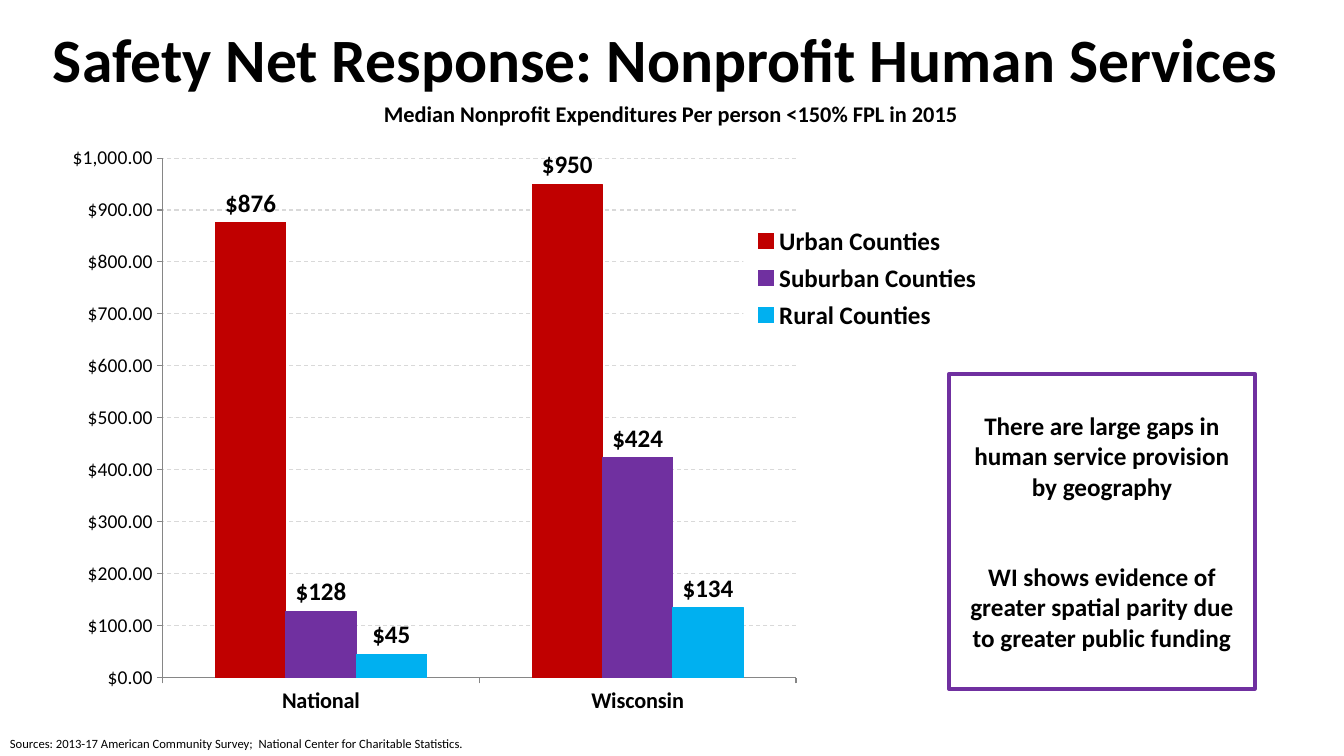
from dataclasses import dataclass

from lxml import etree
from pptx import Presentation
from pptx.chart.data import CategoryChartData
from pptx.dml.color import RGBColor
from pptx.enum.chart import XL_CHART_TYPE, XL_LABEL_POSITION, XL_LEGEND_POSITION, XL_TICK_MARK
from pptx.enum.dml import MSO_LINE
from pptx.enum.shapes import MSO_SHAPE
from pptx.enum.text import MSO_ANCHOR, PP_ALIGN
from pptx.oxml import parse_xml
from pptx.oxml.ns import qn
from pptx.util import Pt

PX = 9525  # EMU per px
CHART_NS = "http://schemas.openxmlformats.org/drawingml/2006/chart"
DRAWING_NS = "http://schemas.openxmlformats.org/drawingml/2006/main"


@dataclass(frozen=True)
class Theme:
    font: str = "Calibri"
    text: str = "000000"
    paper: str = "FFFFFF"
    axis: str = "868686"
    grid: str = "D9D9D9"
    urban: str = "C00000"
    suburban: str = "7030A0"
    rural: str = "00B0F0"
    title_size: int = 44
    body_size: int = 18
    label_size: int = 16
    tick_size: int = 14
    source_size: int = 9


class SlideBuilder:
    def __init__(self, slide, theme):
        self.slide = slide
        self.theme = theme

    def style_font(self, font, size, bold=False):
        font.name = self.theme.font
        font.size = Pt(size)
        font.bold = bold
        font.color.rgb = RGBColor.from_string(self.theme.text)

    def set_text(self, shape, paragraphs, size, bold, align, gap=0):
        frame = shape.text_frame
        frame.text = "\n".join(paragraphs)
        for index, para in enumerate(frame.paragraphs):
            para.alignment = align
            para.space_before = Pt(gap if index else 0)
            for span in para.runs:
                self.style_font(span.font, size, bold)

    def box(self, bounds, paragraphs, size, align=PP_ALIGN.CENTER, border=None, gap=0):
        shape = self.slide.shapes.add_shape(MSO_SHAPE.RECTANGLE, *(n * PX for n in bounds))
        shape.shadow.inherit = False
        shape.fill.solid()
        shape.fill.fore_color.rgb = RGBColor.from_string(self.theme.paper)
        if border:
            shape.line.color.rgb = RGBColor.from_string(border)
            shape.line.width = Pt(3)
        else:
            shape.line.fill.background()
        shape.text_frame.word_wrap = True
        shape.text_frame.vertical_anchor = MSO_ANCHOR.MIDDLE
        self.set_text(shape, paragraphs, size, True, align, gap)

    def note(self, bounds, text, size):
        shape = self.slide.shapes.add_textbox(*(n * PX for n in bounds))
        shape.text_frame.word_wrap = False
        self.set_text(shape, [text], size, False, PP_ALIGN.LEFT)

    def column_chart(self, bounds, categories, series):
        data = CategoryChartData()
        data.categories = categories
        for name, values, _ in series:
            data.add_series(name, values)
        chart = self.slide.shapes.add_chart(
            XL_CHART_TYPE.COLUMN_CLUSTERED, *(n * PX for n in bounds), data).chart
        chart.has_title = False
        self.style_font(chart.font, self.theme.body_size)

        # Columns and their value labels
        plot = chart.plots[0]
        plot.gap_width = 150
        plot.overlap = 0
        plot.vary_by_categories = False
        for column, (_, _, color) in zip(plot.series, series):
            rgb = RGBColor.from_string(color)
            column.format.fill.solid()
            column.format.fill.fore_color.rgb = rgb
            column.format.line.color.rgb = rgb
            column.format.line.width = Pt(0.75)
            labels = column.data_labels
            labels.show_value = True
            labels.number_format = '"$"#,##0'
            labels.number_format_is_linked = False
            labels.position = XL_LABEL_POSITION.OUTSIDE_END
            self.style_font(labels.font, self.theme.body_size, True)

        self.style_axes(chart)
        self.place_legend(chart)
        plot_area = chart.element.find(".//" + qn("c:plotArea"))
        for layout in plot_area.findall(qn("c:layout")):
            plot_area.remove(layout)
        plot_area.insert(0, self.layout(0.085, 0.026, 0.638, 0.882, inner=True))

    def style_axes(self, chart):
        for axis, size, bold in ((chart.category_axis, self.theme.label_size, True),
                                 (chart.value_axis, self.theme.tick_size, False)):
            axis.major_tick_mark = XL_TICK_MARK.OUTSIDE
            axis.minor_tick_mark = XL_TICK_MARK.NONE
            axis.format.line.color.rgb = RGBColor.from_string(self.theme.axis)
            axis.format.line.width = Pt(0.75)
            self.style_font(axis.tick_labels.font, size, bold)
        scale = chart.value_axis
        scale.minimum_scale, scale.maximum_scale, scale.major_unit = 0, 1000, 100
        scale.tick_labels.number_format = '"$"#,##0.00'
        scale.tick_labels.number_format_is_linked = False
        scale.has_major_gridlines = True
        grid_line = scale.major_gridlines.format.line
        grid_line.color.rgb = RGBColor.from_string(self.theme.grid)
        grid_line.width = Pt(0.75)
        grid_line.dash_style = MSO_LINE.DASH

    def place_legend(self, chart):
        chart.has_legend = True
        legend = chart.legend
        legend.position = XL_LEGEND_POSITION.RIGHT
        legend.include_in_layout = False
        self.style_font(legend.font, self.theme.body_size, True)
        element = chart.element.find(".//" + qn("c:legend"))
        element.find(qn("c:legendPos")).addnext(self.layout(0.67, 0.13, 0.25, 0.2))
        # A paper-coloured ground hides the grid behind the legend
        ground = parse_xml(
            f'<c:spPr xmlns:c="{CHART_NS}" xmlns:a="{DRAWING_NS}"><a:solidFill>'
            f'<a:srgbClr val="{self.theme.paper}"/></a:solidFill></c:spPr>')
        element.find(qn("c:overlay")).addnext(ground)

    @staticmethod
    def layout(left, top, width, height, inner=False):
        layout = parse_xml(f'<c:layout xmlns:c="{CHART_NS}"><c:manualLayout/></c:layout>')
        settings = [("layoutTarget", "inner")] if inner else []
        settings += [("xMode", "edge"), ("yMode", "edge"),
                     ("x", left), ("y", top), ("w", width), ("h", height)]
        for tag, value in settings:
            etree.SubElement(layout[0], qn("c:" + tag)).set("val", str(value))
        return layout


def main():
    theme = Theme()
    deck = Presentation()
    deck.slide_width, deck.slide_height = 1280 * PX, 720 * PX
    page = SlideBuilder(deck.slides.add_slide(deck.slide_layouts[6]), theme)

    # Title
    page.box((41, 15, 1195, 81), ["Safety Net Response: Nonprofit Human Services"],
             theme.title_size, PP_ALIGN.LEFT)

    # Spending by county type
    page.column_chart((69, 136, 951, 561), ["National", "Wisconsin"], [
        ("Urban Counties", (876, 950), theme.urban),
        ("Suburban Counties", (128, 424), theme.suburban),
        ("Rural Counties", (45, 134), theme.rural),
    ])

    # Source line and chart heading
    page.note((0, 696, 456, 24),
              "Sources: 2013-17 American Community Survey;  "
              "National Center for Charitable Statistics.", theme.source_size)
    page.box((354, 90, 570, 36),
             ["Median Nonprofit Expenditures Per person <150% FPL in 2015"], theme.label_size)

    # Findings
    page.box((904, 356, 291, 300), [
        "There are large gaps in human service provision by geography",
        "WI shows evidence of greater spatial parity due to greater public funding",
    ], theme.body_size, border=theme.suburban, gap=43)

    deck.save("out.pptx")


if __name__ == "__main__":
    main()
